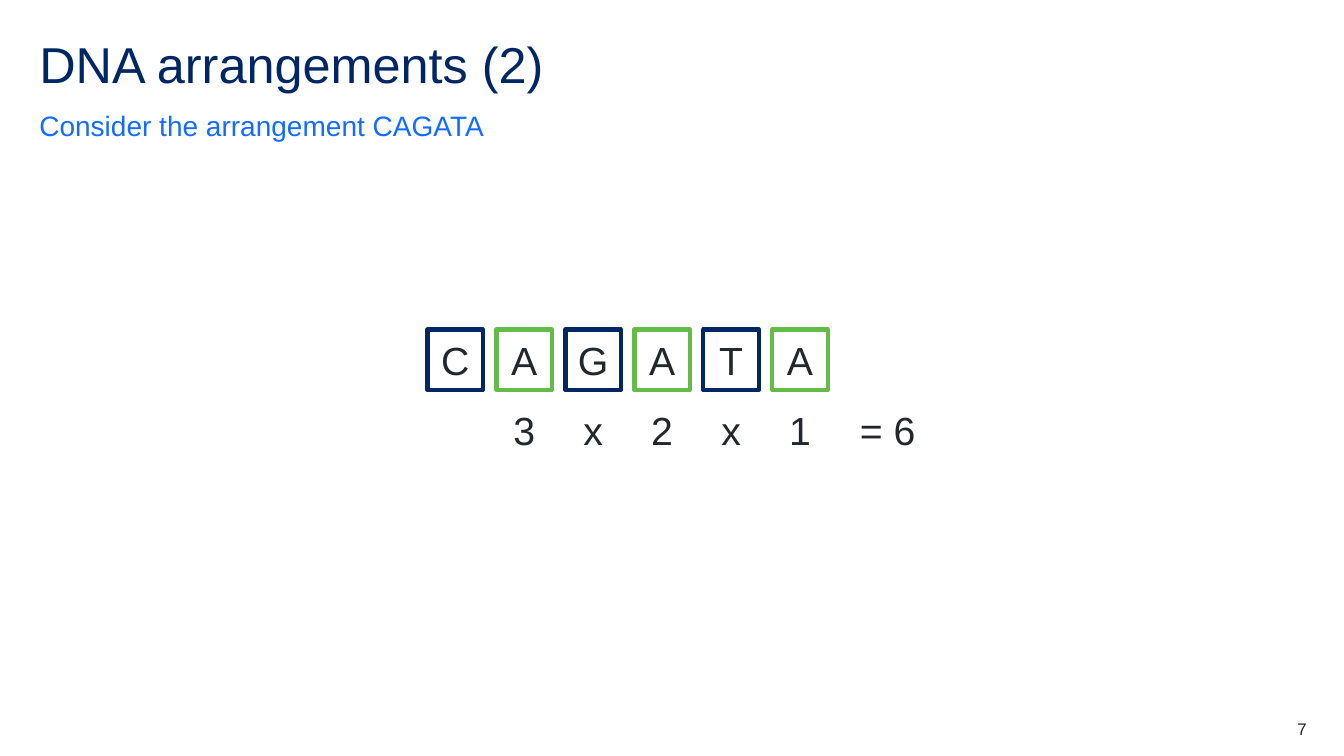
from pptx import Presentation
from pptx.dml.color import RGBColor
from pptx.enum import shapes, text
from pptx.util import Inches, Pt

NAVY = RGBColor(0x00, 0x26, 0x64)
BLUE = RGBColor(0x14, 0x6C, 0xFD)
GREEN = RGBColor(0x64, 0xBB, 0x47)
INK = RGBColor(0x22, 0x27, 0x2B)

LEFT = text.PP_ALIGN.LEFT
CENTER = text.PP_ALIGN.CENTER
RIGHT = text.PP_ALIGN.RIGHT
TOP = text.MSO_ANCHOR.TOP
MIDDLE = text.MSO_ANCHOR.MIDDLE
BOTTOM = text.MSO_ANCHOR.BOTTOM

TILE_WIDTH, TILE_HEIGHT = 0.55, 0.6
RESULT_WIDTH = 0.75


def write(shape, words, size, color=INK, align=CENTER, anchor=TOP, spacing=1.0):
    frame = shape.text_frame
    frame_format = dict(word_wrap=True, vertical_anchor=anchor, margin_left=0,
                        margin_right=0, margin_top=0, margin_bottom=0)
    for name, value in frame_format.items():
        setattr(frame, name, value)
    para = frame.paragraphs[0]
    para.alignment = align
    para.line_spacing = spacing
    span = para.add_run()
    span.text = words
    for name, value in dict(name="Arial", size=Pt(size)).items():
        setattr(span.font, name, value)
    span.font.color.rgb = color


def add_label(page, box, words, size, **style):
    label = page.shapes.add_textbox(*map(Inches, box))
    write(label, words, size, **style)


def add_tile(page, box, letter, color):
    tile = page.shapes.add_shape(shapes.MSO_SHAPE.RECTANGLE, *map(Inches, box))
    tile.shadow.inherit = False
    tile.fill.background()
    tile.line.color.rgb = color
    tile.line.width = Pt(3)
    write(tile, letter, 28, anchor=MIDDLE)


def add_heading(page, box):
    left, top, width, height = box
    add_label(page, (left, top, width, 0.6), "DNA arrangements (2)", 36,
              color=NAVY, align=LEFT, spacing=0.9)
    add_label(page, (left, top + height - 0.34, width, 0.34),
              "Consider the arrangement CAGATA", 20,
              color=BLUE, align=LEFT, anchor=BOTTOM, spacing=1.5)


def add_arrangement(page, box):
    """Place the letter tiles, with the count of ways to order the A's below."""
    left, top, width, height = box
    letters = "CAGATA"
    factors = " 3x2x1"
    pitch = (width - TILE_WIDTH) / (len(letters) - 1)
    count_top = top + height - TILE_HEIGHT
    for index, (letter, factor) in enumerate(zip(letters, factors)):
        x = left + index * pitch
        color = GREEN if letter == "A" else NAVY
        add_tile(page, (x, top, TILE_WIDTH, TILE_HEIGHT), letter, color)
        if factor != " ":
            add_label(page, (x, count_top, TILE_WIDTH, TILE_HEIGHT), factor, 28)
    add_label(page, (left + width + 0.22, count_top, RESULT_WIDTH, TILE_HEIGHT),
              "= 6", 28)


def main():
    deck = Presentation()
    deck.slide_width, deck.slide_height = Inches(13.33), Inches(7.5)
    page = deck.slides.add_slide(deck.slide_layouts[6])
    add_heading(page, (0.39, 0.4, 12.56, 1.01))
    add_arrangement(page, (4.24, 3.27, 3.97, 1.36))
    add_label(page, (12.17, 7.13, 0.79, 0.2), "7", 12, align=RIGHT)
    deck.save("out.pptx")


if __name__ == "__main__":
    main()
